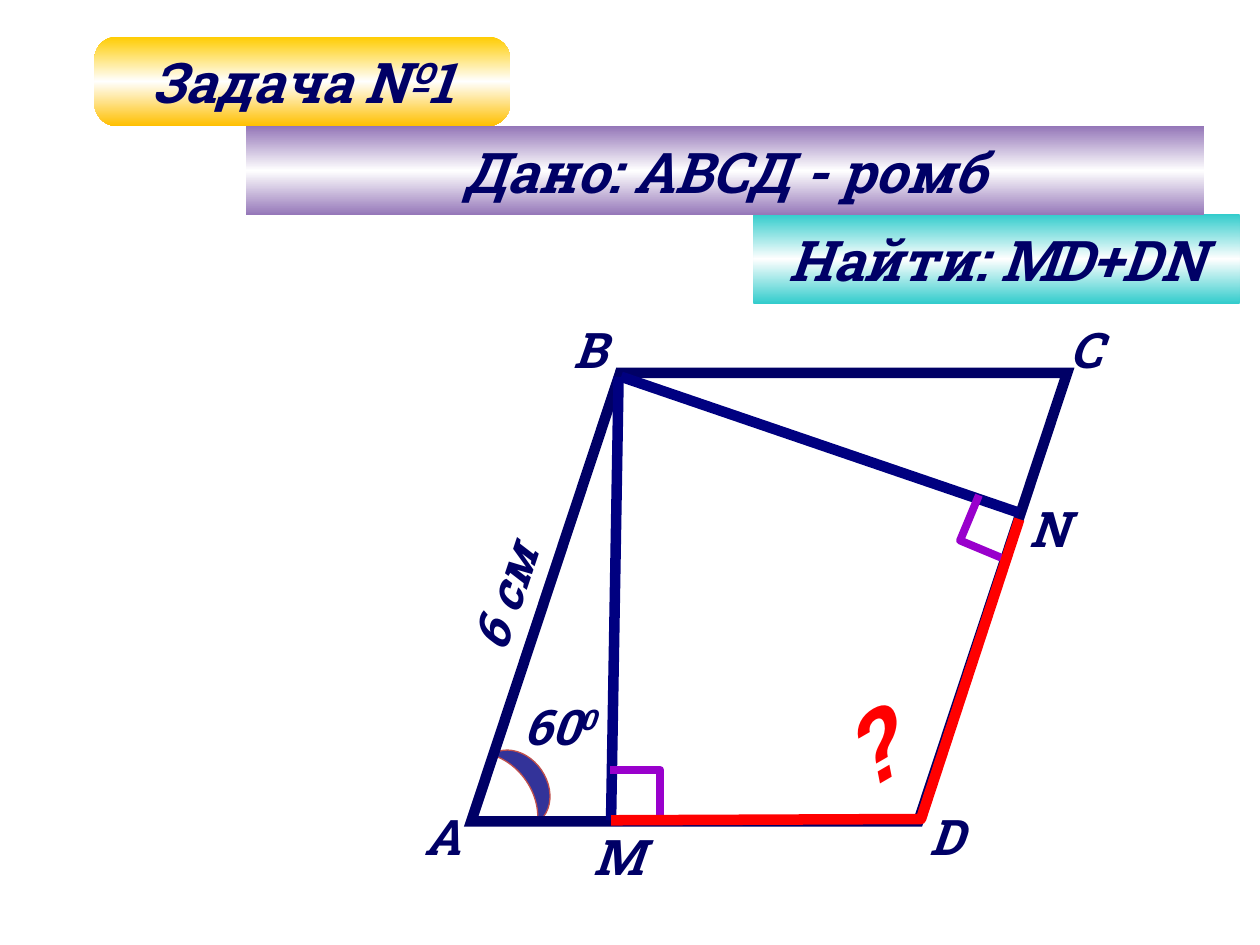
from lxml import etree
from pptx import Presentation
from pptx.dml.color import RGBColor
from pptx.enum import shapes, text
from pptx.oxml import ns
from pptx.util import Inches, Pt

NAVY, BLUE, PURPLE, RED = "000066", "000080", "9900CC", "FF0000"


def color(hex_value):
    return RGBColor.from_string(hex_value)


def style_run(run, size, hex_value):
    run.font.name = "Roboto Slab"
    run.font.size = Pt(size)
    run.font.bold = run.font.italic = True
    run.font.color.rgb = color(hex_value)


def add_outline(shape, hex_value, width):
    shape.line.color.rgb = color(hex_value)
    shape.line.width = Pt(width)


def add_preset(slide, kind, box):
    shape = slide.shapes.add_shape(kind, *map(Inches, box))
    shape.shadow.inherit = False
    return shape


def fill_gradient(shape, hex_values):
    shape.fill.gradient()
    shape.fill.gradient_angle = 270
    stops = shape.element.spPr.find(".//" + ns.qn("a:gsLst"))
    for stop in list(stops):
        stops.remove(stop)
    for position, hex_value in zip((0, 50000, 100000), hex_values):
        stop = etree.SubElement(stops, ns.qn("a:gs"), pos=str(position))
        etree.SubElement(stop, ns.qn("a:srgbClr"), val=hex_value)


def draw_heading(slide, box, words, kind, edges):
    banner = add_preset(slide, kind, box)
    fill_gradient(banner, (edges[0], "FFFFFF", edges[1]))
    banner.line.fill.background()
    frame = banner.text_frame
    frame.text = words
    frame.word_wrap = False
    frame.vertical_anchor = text.MSO_ANCHOR.MIDDLE
    heading = frame.paragraphs[0]
    heading.alignment = text.PP_ALIGN.CENTER
    style_run(heading.runs[0], 32, NAVY)
    return banner


def draw_path(slide, origin, points, hex_value, width):
    left, top = origin
    vertices = [(Inches(left + x), Inches(top + y)) for x, y in points]
    builder = slide.shapes.build_freeform(*vertices[0], scale=1.0)
    builder.add_line_segments(vertices[1:], close=False)
    path = builder.convert_to_shape()
    path.shadow.inherit = False
    path.fill.background()
    add_outline(path, hex_value, width)


def draw_label(slide, box, words, size=28, hex_value=NAVY, rotation=0, wrap=True):
    label = slide.shapes.add_textbox(*map(Inches, box))
    label.rotation = rotation
    frame = label.text_frame
    frame.text = words
    frame.word_wrap = wrap
    frame.auto_size = text.MSO_AUTO_SIZE.SHAPE_TO_FIT_TEXT
    style_run(frame.paragraphs[0].runs[0], size, hex_value)
    return label


def draw_angle(slide, box):
    left, top = box[:2]
    arc = add_preset(slide, shapes.MSO_SHAPE.MOON, (left, top, 0.26, 0.65))
    arc.adjustments[0] = 0.57
    arc.rotation = 325.6
    arc.element.spPr.xfrm.set("flipH", "1")
    arc.fill.solid()
    arc.fill.fore_color.rgb = color("333399")
    add_outline(arc, "C0504D", 0.75)

    degrees = draw_label(slide, (left, top - 0.38, 0.91, 0.57), "60", wrap=False)
    zero = degrees.text_frame.paragraphs[0].add_run()
    zero.text = "0"
    style_run(zero, 28, NAVY)
    zero.font._element.set("baseline", "30000")


def draw_rhombus(slide, box):
    left, top, _, height = box
    draw_angle(slide, (left + 0.32, top + 2.9))

    rhombus = add_preset(slide, shapes.MSO_SHAPE.PARALLELOGRAM, box)
    rhombus.adjustments[0] = 0.332
    rhombus.fill.background()
    add_outline(rhombus, NAVY, 6)
    line = rhombus.element.spPr.find(ns.qn("a:ln"))
    etree.SubElement(line, ns.qn("a:miter"), lim="800000")

    foot_m, foot_n = (1.11, height - 0.01), (4.35, 1.11)
    paths = [
        ([(1.17, 0.03), foot_m], BLUE, 6),
        ([(1.19, 0.03), foot_n], BLUE, 6),
        ([(1.5, 3.55), (1.5, 3.15), (1.1, 3.15)], PURPLE, 4.5),
        ([(4.03, 0.97), (3.88, 1.33), (4.24, 1.48)], PURPLE, 4.5),
        ([foot_m, (3.57, 3.54), (4.35, 1.16)], RED, 6),
    ]
    for points, hex_value, width in paths:
        draw_path(slide, (left, top), points, hex_value, width)

    vertex_labels = [
        ("А", -0.47, 3.39, 0.46),
        ("B", 0.71, -0.47, 0.46),
        ("C", 4.65, -0.47, 0.46),
        ("D", 3.54, 3.39, 0.46),
        ("М", 0.87, 3.55, 0.63),
        ("N", 4.33, 0.95, 0.46),
    ]
    for name, x, y, width in vertex_labels:
        draw_label(slide, (left + x, top + y, width, 0.57), name)
    draw_label(slide, (left - 0.3, top + 1.44, 1.16, 0.57), "6 см",
               rotation=288.4, wrap=False)
    draw_label(slide, (left + 2.87, top + 2.44, 0.67, 1.01), "?",
               size=54, hex_value=RED, rotation=329.9, wrap=False)


def main():
    deck = Presentation()
    deck.slide_width, deck.slide_height = Inches(10), Inches(7.5)
    slide = deck.slides.add_slide(deck.slide_layouts[6])
    draw_rhombus(slide, (3.74, 2.96, 4.73, 3.56))
    rectangle = shapes.MSO_SHAPE.RECTANGLE
    draw_heading(slide, (5.98, 1.7, 3.86, 0.71), "Найти: МD+DN",
                 rectangle, ("33CCCC", "33CCCC"))
    draw_heading(slide, (1.95, 1, 7.61, 0.71), "Дано: АВСД - ромб",
                 rectangle, ("9476B8", "9476B8"))
    task = draw_heading(slide, (0.75, 0.29, 3.3, 0.71), "Задача №1",
                        shapes.MSO_SHAPE.ROUNDED_RECTANGLE, ("FFCC00", "FFC000"))
    task.adjustments[0] = 0.254
    deck.save("out.pptx")


if __name__ == "__main__":
    main()
